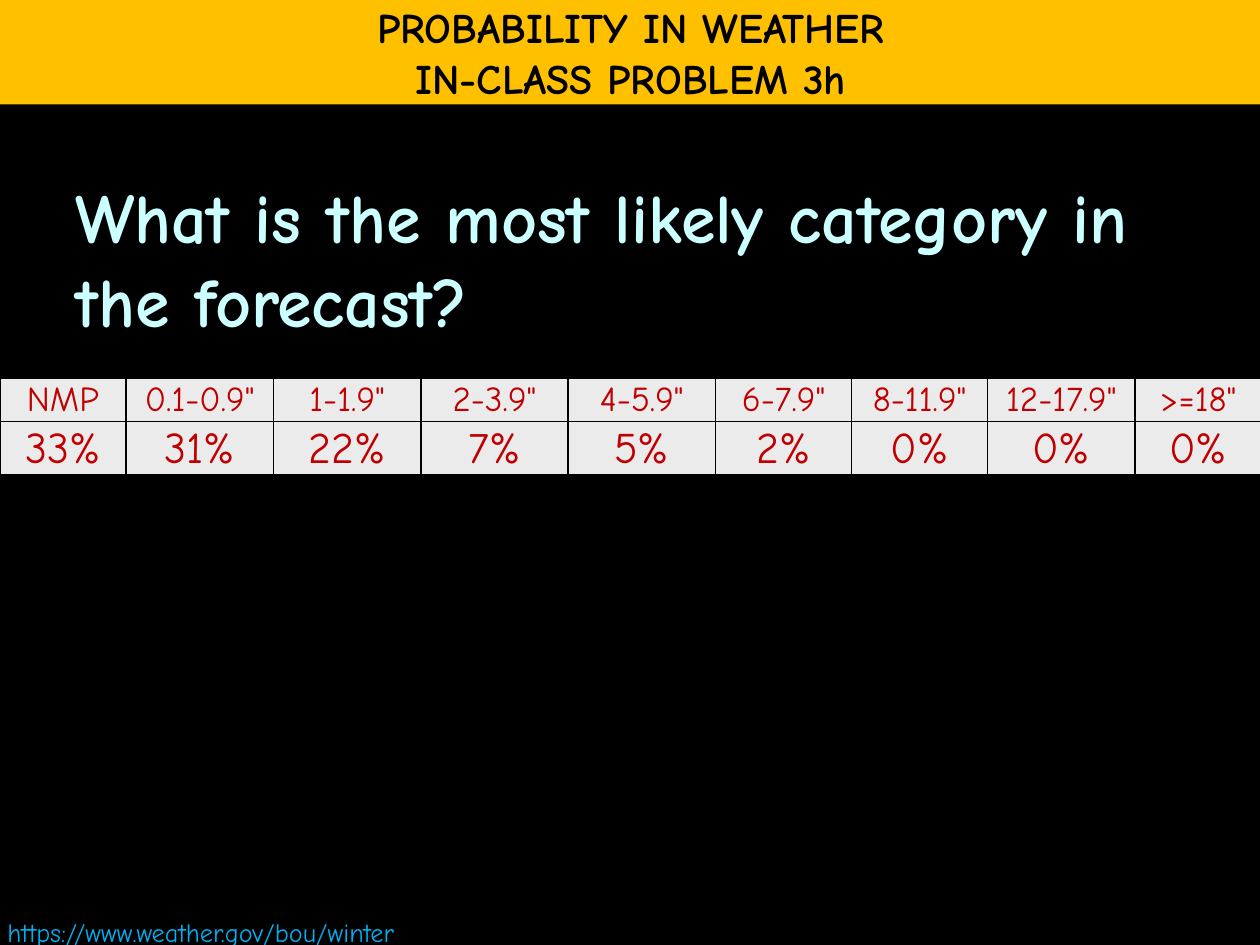
from lxml import etree
from pptx import Presentation
from pptx import util as u
from pptx.dml.color import RGBColor
from pptx.enum import shapes, text
from pptx.oxml.ns import qn

BLACK = RGBColor(0x00, 0x00, 0x00)
AMBER = RGBColor(0xFF, 0xC0, 0x00)
PALE_CYAN = RGBColor(0xCC, 0xFF, 0xFF)
BLUE = RGBColor(0x00, 0xB0, 0xF0)
RED = RGBColor(0xC0, 0x00, 0x00)
LIGHT_GRAY = RGBColor(0xEB, 0xEB, 0xEB)
FONT = "Comic Neue"

FORECAST = [
    ("NMP", "33%", 1),
    ('0.1-0.9"', "31%", 1.17),
    ('1-1.9"', "22%", 1.17),
    ('2-3.9"', "7%", 1.17),
    ('4-5.9"', "5%", 1.17),
    ('6-7.9"', "2%", 1.08),
    ('8-11.9"', "0%", 1.08),
    ('12-17.9"', "0%", 1.17),
    ('>=18"', "0%", 1),
]
ROWS = [(0.34, 20), (0.42, 25)]


def box(left, top, width, height):
    return [u.Inches(v) for v in (left, top, width, height)]


def set_attributes(target, **values):
    for name, value in values.items():
        setattr(target, name, value)


def write(tf, lines, size, color, bold=False, **paragraph_format):
    for i, line in enumerate(lines):
        p = tf.add_paragraph() if i else tf.paragraphs[0]
        set_attributes(p, **paragraph_format)
        r = p.add_run()
        r.text = line
        set_attributes(r.font, name=FONT, size=u.Pt(size), bold=bold)
        r.font.color.rgb = color


def add_text(s, place, line, size, color, auto_size, **formats):
    tf = s.shapes.add_textbox(*box(*place)).text_frame
    set_attributes(tf, word_wrap=True, auto_size=auto_size)
    write(tf, [line], size, color, **formats)


def add_banner(s, place, lines):
    sp = s.shapes.add_shape(shapes.MSO_SHAPE.RECTANGLE, *box(*place))
    sp.shadow.inherit = False
    sp.fill.solid()
    sp.fill.fore_color.rgb = AMBER
    sp.line.fill.background()
    tf = sp.text_frame
    set_attributes(tf, word_wrap=False, vertical_anchor=text.MSO_ANCHOR.MIDDLE)
    write(tf, lines, 24, BLACK, bold=True, alignment=text.PP_ALIGN.CENTER)


def add_borders(cell):
    props = cell._tc.get_or_add_tcPr()
    for i, side in enumerate(("lnL", "lnR", "lnT", "lnB")):
        line = etree.Element(qn("a:" + side), w=str(u.Pt(1)))
        fill = etree.SubElement(line, qn("a:solidFill"))
        etree.SubElement(fill, qn("a:srgbClr"), val=str(BLACK))
        props.insert(i, line)


def add_forecast_table(s, place):
    table = s.shapes.add_table(len(ROWS), len(FORECAST), *box(*place)).table
    set_attributes(table, first_row=False, horz_banding=False)
    for row, (height, _) in zip(table.rows, ROWS):
        row.height = u.Inches(height)
    for col, (*values, width) in enumerate(FORECAST):
        table.columns[col].width = u.Inches(width)
        for row, (value, (_, size)) in enumerate(zip(values, ROWS)):
            cell = table.cell(row, col)
            margin = u.Inches(0.01)
            set_attributes(cell, margin_left=margin, margin_right=margin,
                           margin_top=margin, margin_bottom=0,
                           vertical_anchor=text.MSO_ANCHOR.MIDDLE)
            cell.fill.solid()
            cell.fill.fore_color.rgb = LIGHT_GRAY
            write(cell.text_frame, [value], size, RED,
                  alignment=text.PP_ALIGN.CENTER)
            add_borders(cell)


def main():
    prs = Presentation()
    set_attributes(prs, slide_width=u.Inches(10), slide_height=u.Inches(7.5))
    s = prs.slides.add_slide(prs.slide_layouts[6])
    s.background.fill.solid()
    s.background.fill.fore_color.rgb = BLACK

    add_text(s, (0.5, 1.33, 9, 6.17),
             "What is the most likely category in the forecast?",
             40, PALE_CYAN, text.MSO_AUTO_SIZE.NONE,
             bold=True, space_before=u.Pt(8))
    add_text(s, (-0.04, 7.22, 5.01, 0.35),
             "https://www.weather.gov/bou/winter",
             15, BLUE, text.MSO_AUTO_SIZE.SHAPE_TO_FIT_TEXT)
    add_forecast_table(s, (0, 3, 10, 0.76))
    add_banner(s, (0, 0, 10.01, 0.83),
               ["PROBABILITY IN WEATHER", "IN-CLASS PROBLEM 3h"])
    prs.save("out.pptx")


if __name__ == "__main__":
    main()
